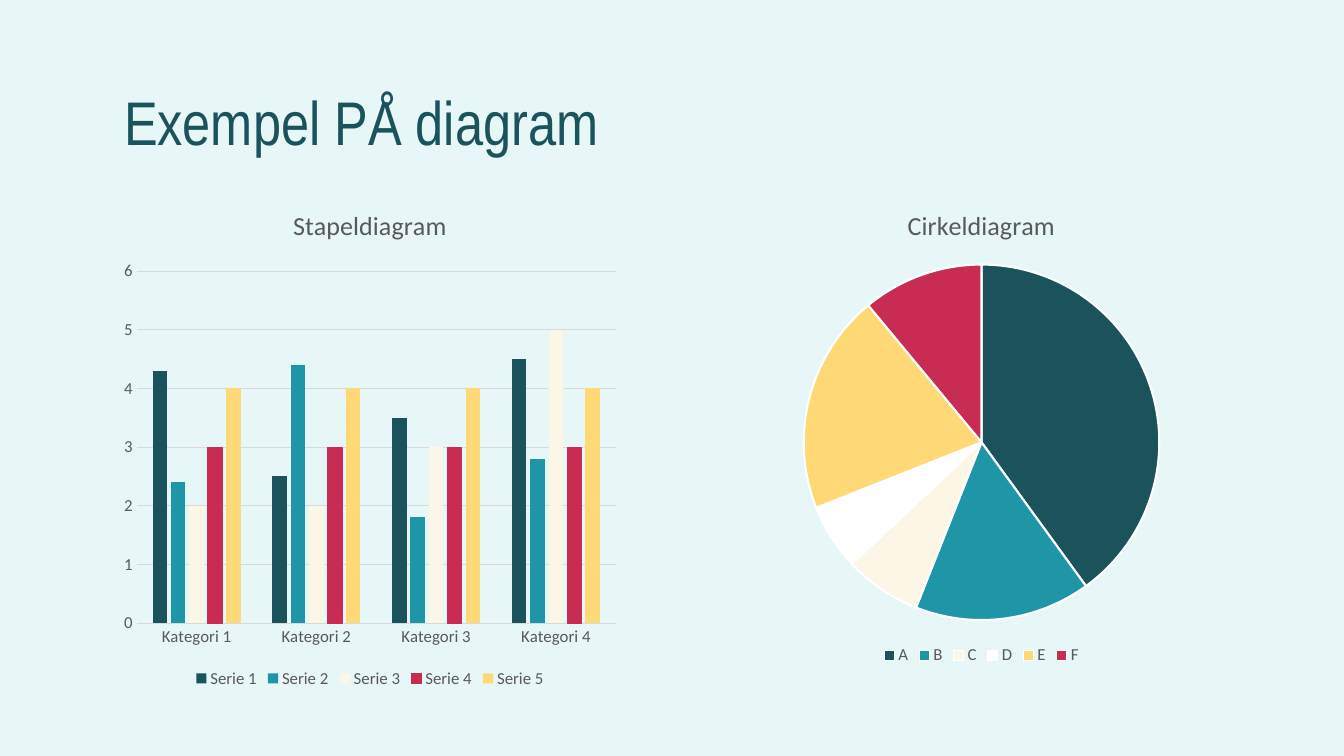
from pptx import Presentation
from pptx.chart.data import CategoryChartData
from pptx.dml.color import RGBColor
from pptx.enum.chart import XL_CHART_TYPE as CT, XL_LEGEND_POSITION as LP, XL_TICK_MARK as TM
from pptx.enum.text import MSO_ANCHOR, PP_ALIGN
from pptx.util import Inches, Pt

COLORS = {
    "bg": "E7F6F6", "dark": "1A535C", "teal": "1E96A8", "cream": "FCF6E6",
    "white": "FFFFFF", "yellow": "FFD975", "red": "C92C53",
    "text": "595959", "grid": "D9D9D9",
}
TITLE = "Exempel PÅ diagram"
COLUMN = {
    "title": "Stapeldiagram",
    "type": CT.COLUMN_CLUSTERED,
    "at": (1.13, 1.86, 5.08, 5.01),
    "cats": ["Kategori 1", "Kategori 2", "Kategori 3", "Kategori 4"],
    "series": [
        ("Serie 1", (4.3, 2.5, 3.5, 4.5)),
        ("Serie 2", (2.4, 4.4, 1.8, 2.8)),
        ("Serie 3", (2, 2, 3, 5)),
        ("Serie 4", (3, 3, 3, 3)),
        ("Serie 5", (4, 4, 4, 4)),
    ],
    "colors": ["dark", "teal", "cream", "red", "yellow"],
}
PIE = {
    "title": "Cirkeldiagram",
    "type": CT.PIE,
    "at": (6.66, 1.86, 6.15, 4.78),
    "cats": ["A", "B", "C", "D", "E", "F"],
    "series": [("Series 1", (40, 16, 7, 6, 20, 11))],
    "colors": ["dark", "teal", "cream", "white", "yellow", "red"],
}


def rgb(name):
    return RGBColor.from_string(COLORS[name])


def style_font(font, size, color="text", name="Calibri"):
    font.size = Pt(size)
    font.name = name
    font.bold = False
    font.color.rgb = rgb(color)


def fill(fmt, color):
    fmt.fill.solid()
    fmt.fill.fore_color.rgb = rgb(color)


def outline(fmt, color, width):
    fmt.line.color.rgb = rgb(color)
    fmt.line.width = Pt(width)


def add_chart(slide, content):
    data = CategoryChartData()
    data.categories = content["cats"]
    for name, values in content["series"]:
        data.add_series(name, values)
    box = [Inches(v) for v in content["at"]]
    chart = slide.shapes.add_chart(content["type"], *box, data).chart
    style_font(chart.font, 12)
    chart.has_title = True
    r = chart.chart_title.text_frame.paragraphs[0].add_run()
    r.text = content["title"]
    style_font(r.font, 18.6)
    chart.chart_title.include_in_layout = False
    chart.has_legend = True
    chart.legend.position = LP.BOTTOM
    chart.legend.include_in_layout = False
    style_font(chart.legend.font, 12)
    return chart


prs = Presentation()
prs.slide_width, prs.slide_height = Inches(13.33), Inches(7.5)
slide = prs.slides.add_slide(prs.slide_layouts[5])
fill(slide.background, "bg")

title = slide.shapes.title
title.left, title.top = Inches(1.13), Inches(0.63)
title.width, title.height = Inches(11.05), Inches(1.23)
tf = title.text_frame
tf.word_wrap = True
tf.vertical_anchor = MSO_ANCHOR.MIDDLE
p = tf.paragraphs[0]
p.alignment = PP_ALIGN.LEFT
p.line_spacing = 0.9
r = p.add_run()
r.text = TITLE
style_font(r.font, 44, "dark", "Arial Narrow")

chart = add_chart(slide, COLUMN)
plot = chart.plots[0]
plot.gap_width, plot.overlap = 219, -27
plot.vary_by_categories = False
for series, color in zip(plot.series, COLUMN["colors"]):
    fill(series.format, color)
    series.invert_if_negative = False
    if color == "red":
        outline(series.format, color, 0.75)
for axis in (chart.category_axis, chart.value_axis):
    axis.major_tick_mark = axis.minor_tick_mark = TM.NONE
    style_font(axis.tick_labels.font, 12)
outline(chart.category_axis.format, "grid", 0.75)
values = chart.value_axis
values.minimum_scale, values.maximum_scale, values.major_unit = 0, 6, 1
values.format.line.fill.background()
outline(values.major_gridlines.format, "grid", 0.75)

plot = add_chart(slide, PIE).plots[0]
plot.vary_by_categories = True
for i, color in enumerate(PIE["colors"]):
    point = plot.series[0].points[i]
    fill(point.format, color)
    outline(point.format, "white", 1.5)

prs.save("out.pptx")
